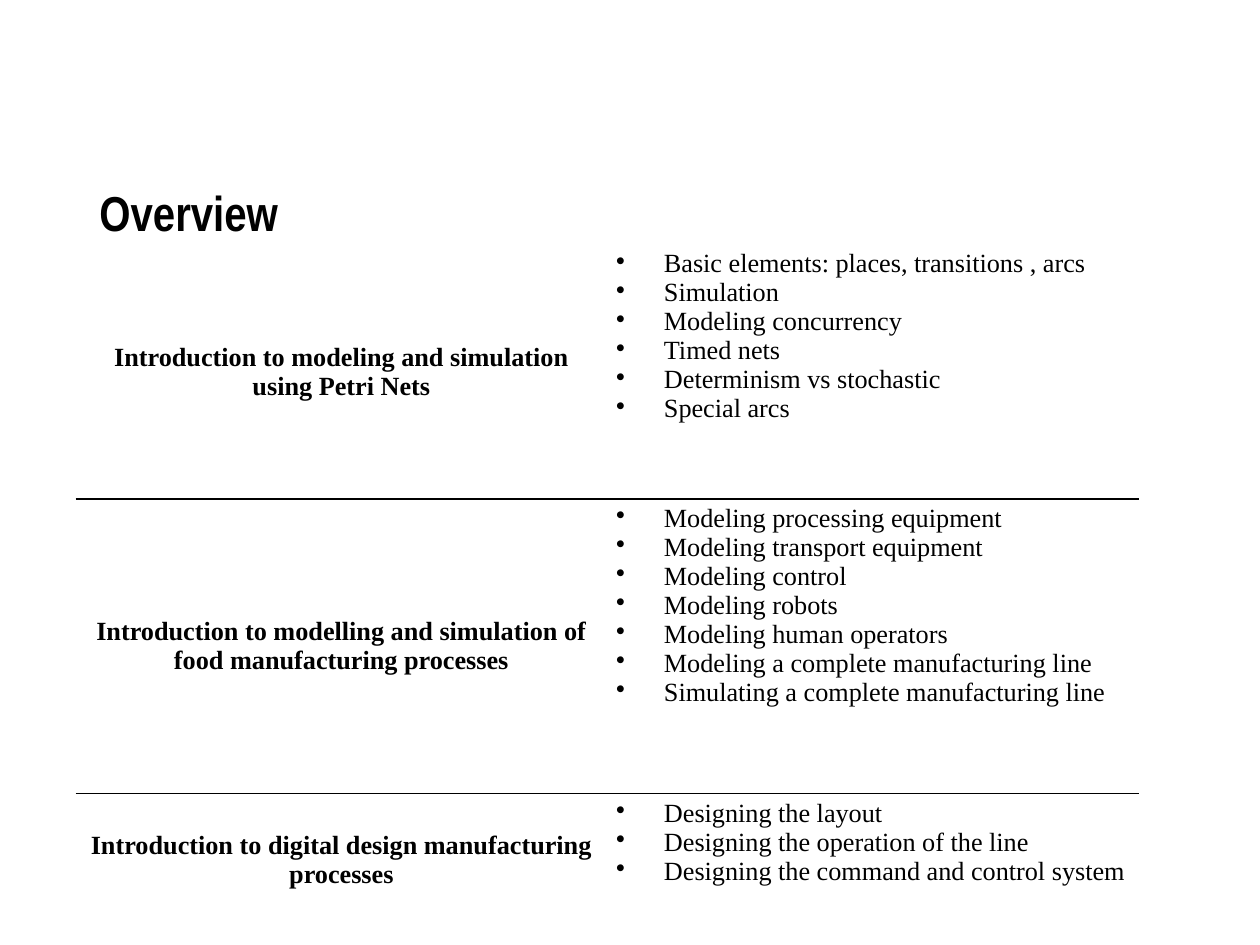
"""Build the course overview slide: a title above a table of topics."""
import dataclasses
import typing

import lxml.etree
import pptx
import pptx.dml.color
import pptx.enum.text
import pptx.oxml.ns
import pptx.util

Inches = pptx.util.Inches
Align = pptx.enum.text.PP_ALIGN
Anchor = pptx.enum.text.MSO_ANCHOR


@dataclasses.dataclass(frozen=True)
class Theme:
    ink: str = "000000"
    title_font: str = "Arial Narrow"
    body_font: str = "Times New Roman"
    title_size: float = 28
    body_size: float = 15
    rule_width: float = 1
    bullet_indent: float = 0.38


@dataclasses.dataclass(frozen=True)
class Topic:
    heading: str
    items: tuple[str, ...]
    height: float


THEME = Theme()
COLUMN_WIDTH = 4.22
TOPICS = (
    Topic("Introduction to modeling and simulation using Petri Nets",
          ("Basic elements: places, transitions , arcs", "Simulation",
           "Modeling concurrency", "Timed nets",
           "Determinism vs stochastic", "Special arcs"), 2.02),
    Topic("Introduction to modelling and simulation of food manufacturing processes",
          ("Modeling processing equipment", "Modeling transport equipment",
           "Modeling control", "Modeling robots", "Modeling human operators",
           "Modeling a complete manufacturing line",
           "Simulating a complete manufacturing line"), 2.34),
    Topic("Introduction to digital design manufacturing processes",
          ("Designing the layout", "Designing the operation of the line",
           "Designing the command and control system"), 1.06),
)


def add_element(parent: typing.Any, tag: str, **attributes: str) -> typing.Any:
    return lxml.etree.SubElement(parent, pptx.oxml.ns.qn(tag), attributes)


def write_text(frame: typing.Any, *lines: str, font: str = THEME.body_font,
               size: float = THEME.body_size, bold: bool = False,
               align: Align = Align.LEFT, bullet: bool = False) -> None:
    frame.word_wrap = True
    for index, line in enumerate(lines):
        paragraph = frame.add_paragraph() if index else frame.paragraphs[0]
        paragraph.alignment = align
        if bullet:
            properties = paragraph._p.get_or_add_pPr()
            indent = Inches(THEME.bullet_indent)
            properties.set("marL", str(indent))
            properties.set("indent", str(-indent))
            add_element(properties, "a:buChar", char="•")
        run = paragraph.add_run()
        run.text = line
        run.font.name = font
        run.font.size = pptx.util.Pt(size)
        run.font.bold = bold
        run.font.color.rgb = pptx.dml.color.RGBColor.from_string(THEME.ink)


def style_cell(cell: typing.Any, ruled_sides: str, anchor: Anchor) -> None:
    cell.margin_left = cell.margin_right = Inches(0.07)
    cell.margin_top = cell.margin_bottom = Inches(0.04)
    cell.vertical_anchor = anchor
    properties = cell._tc.get_or_add_tcPr()
    for side in "LRTB":
        line = add_element(properties, f"a:ln{side}",
                           w=str(pptx.util.Pt(THEME.rule_width)))
        if side in ruled_sides:
            fill = add_element(line, "a:solidFill")
            add_element(fill, "a:srgbClr", val=THEME.ink)
        else:
            add_element(line, "a:noFill")
    cell.fill.background()


def add_title(slide: typing.Any, text: str) -> None:
    box = slide.shapes.add_textbox(Inches(0.69), Inches(1.15), Inches(8.62), Inches(1.06))
    box.text_frame.vertical_anchor = Anchor.MIDDLE
    write_text(box.text_frame, text, font=THEME.title_font, size=THEME.title_size, bold=True)


def add_topics(slide: typing.Any, topics: tuple[Topic, ...]) -> None:
    height = sum(topic.height for topic in topics)
    table = slide.shapes.add_table(
        len(topics), 2, Inches(0.6), Inches(1.94),
        Inches(2 * COLUMN_WIDTH), Inches(height)).table
    table.first_row = table.horz_banding = False
    for column in table.columns:
        column.width = Inches(COLUMN_WIDTH)
    for index, topic in enumerate(topics):
        table.rows[index].height = Inches(topic.height)
        ruled_sides = ("T" if index else "") + ("B" if index < len(topics) - 1 else "")
        heading, details = table.cell(index, 0), table.cell(index, 1)
        style_cell(heading, ruled_sides, Anchor.MIDDLE)
        style_cell(details, ruled_sides, Anchor.TOP)
        write_text(heading.text_frame, topic.heading, bold=True, align=Align.CENTER)
        write_text(details.text_frame, *topic.items, bullet=True)


def main() -> None:
    presentation = pptx.Presentation()
    presentation.slide_width = Inches(10)
    presentation.slide_height = Inches(7.5)
    slide = presentation.slides.add_slide(presentation.slide_layouts[6])
    add_title(slide, "Overview")
    add_topics(slide, TOPICS)
    presentation.save("out.pptx")


if __name__ == "__main__":
    main()
